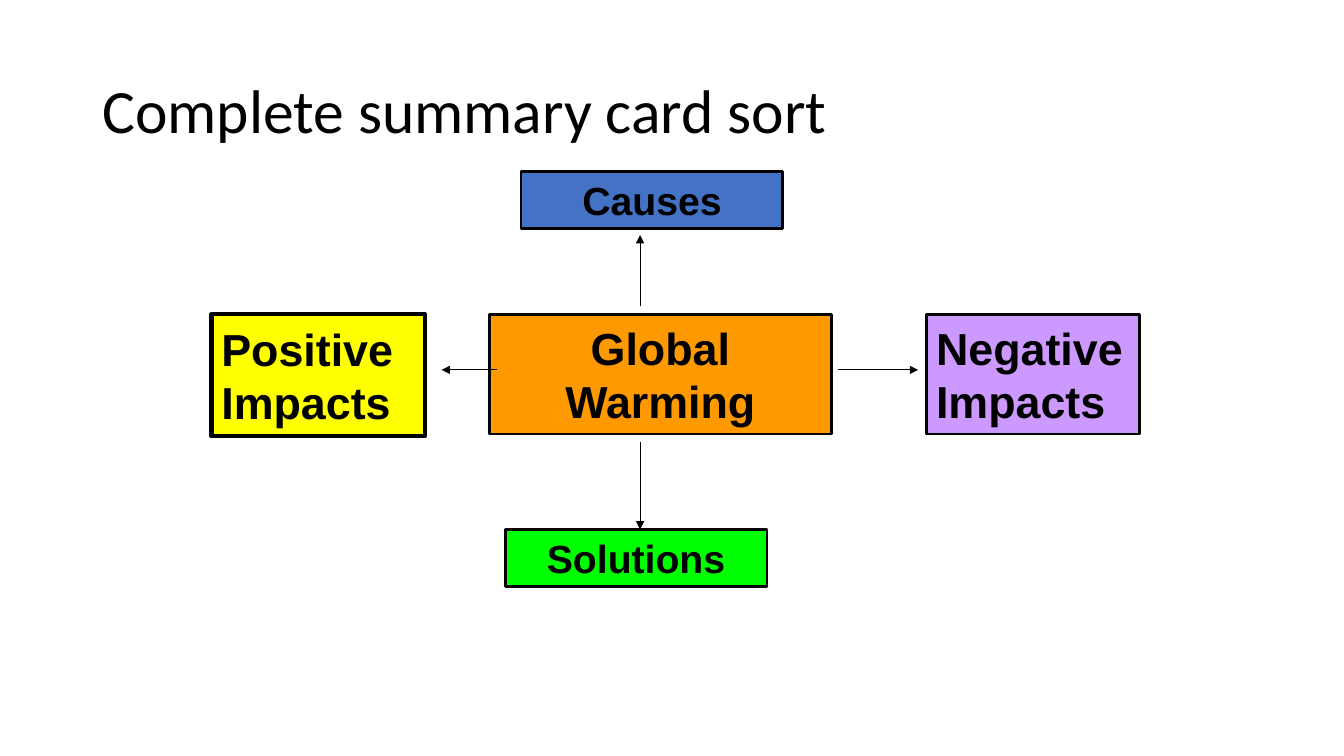
from lxml import etree
from pptx import Presentation
from pptx.dml.color import RGBColor
from pptx.enum.shapes import MSO_CONNECTOR, MSO_SHAPE
from pptx.enum.text import MSO_ANCHOR, PP_ALIGN
from pptx.oxml.ns import qn
from pptx.util import Cm, Pt

RECTANGLE = MSO_SHAPE.RECTANGLE
STRAIGHT = MSO_CONNECTOR.STRAIGHT
MIDDLE = MSO_ANCHOR.MIDDLE
LEFT, CENTER = PP_ALIGN.LEFT, PP_ALIGN.CENTER

BLACK = RGBColor(0x00, 0x00, 0x00)
ORANGE = RGBColor(0xFF, 0x99, 0x00)
BLUE = RGBColor(0x44, 0x72, 0xC4)
PURPLE = RGBColor(0xCC, 0x99, 0xFF)
GREEN = RGBColor(0x00, 0xFF, 0x00)
YELLOW = RGBColor(0xFF, 0xFF, 0x00)

# Shared positions and sizes in centimetres
ARROW_X = 16.13
ARROW_Y = 9.32
ROW_TOP = 7.92
ROW_HEIGHT = 3.02
SIDE_WIDTH = 5.38
TOPIC_WIDTH, TOPIC_HEIGHT = 6.6, 1.45


def write_text(shape, text, font_name, size, alignment, bold=False):
    text_frame = shape.text_frame
    text_frame.word_wrap = True
    text_frame.vertical_anchor = MIDDLE
    text_frame.text = text
    paragraph = text_frame.paragraphs[0]
    paragraph.alignment = alignment
    font = paragraph.runs[0].font
    font.name = font_name
    font.size = Pt(size)
    font.bold = bold
    font.color.rgb = BLACK
    return paragraph


def add_title(slide, text):
    box = slide.shapes.add_textbox(Cm(2.33), Cm(1.02), Cm(29.21), Cm(3.68))
    paragraph = write_text(box, text, "Calibri", 44, LEFT)
    paragraph.line_spacing = 0.9


def add_card(slide, text, left, top, width, height, fill, size,
             alignment=CENTER, border=2):
    card = slide.shapes.add_shape(
        RECTANGLE, Cm(left), Cm(top), Cm(width), Cm(height))
    card.shadow.inherit = False
    card.fill.solid()
    card.fill.fore_color.rgb = fill
    card.line.color.rgb = BLACK
    card.line.width = Pt(border)
    write_text(card, text, "Arial", size, alignment, bold=True)


def add_arrow(slide, start_x, start_y, end_x, end_y):
    arrow = slide.shapes.add_connector(
        STRAIGHT, Cm(start_x), Cm(start_y), Cm(end_x), Cm(end_y))
    arrow.line.color.rgb = BLACK
    arrow.line.width = Pt(0.75)
    line = arrow.line._get_or_add_ln()
    etree.SubElement(line, qn("a:tailEnd"), type="triangle")
    etree.SubElement(arrow._element.spPr, qn("a:effectLst"))


def main():
    presentation = Presentation()
    presentation.slide_width = Cm(33.87)
    presentation.slide_height = Cm(19.05)
    slide = presentation.slides.add_slide(presentation.slide_layouts[6])

    add_title(slide, "Complete summary card sort")

    # Central theme
    add_card(slide, "Global Warming", 12.34, ROW_TOP, 8.61, ROW_HEIGHT,
             ORANGE, 32)

    # Topics above and below
    add_card(slide, "Causes", 13.13, 4.32, TOPIC_WIDTH, TOPIC_HEIGHT, BLUE, 28)
    add_card(slide, "Solutions", 12.73, 13.34, TOPIC_WIDTH, TOPIC_HEIGHT,
             GREEN, 28)

    # Impacts on either side
    add_card(slide, "Positive Impacts", 5.33, ROW_TOP, SIDE_WIDTH, 3.07,
             YELLOW, 32, LEFT, border=3)
    add_card(slide, "Negative Impacts", 23.34, ROW_TOP, SIDE_WIDTH, ROW_HEIGHT,
             PURPLE, 32, LEFT)

    # Arrows outwards from the theme: up, down, left, right
    add_arrow(slide, ARROW_X, 7.72, ARROW_X, 5.92)
    add_arrow(slide, ARROW_X, 11.13, ARROW_X, 13.34)
    add_arrow(slide, 12.52, ARROW_Y, 11.13, ARROW_Y)
    add_arrow(slide, 21.13, ARROW_Y, 23.14, ARROW_Y)

    presentation.save("out.pptx")


if __name__ == "__main__":
    main()
